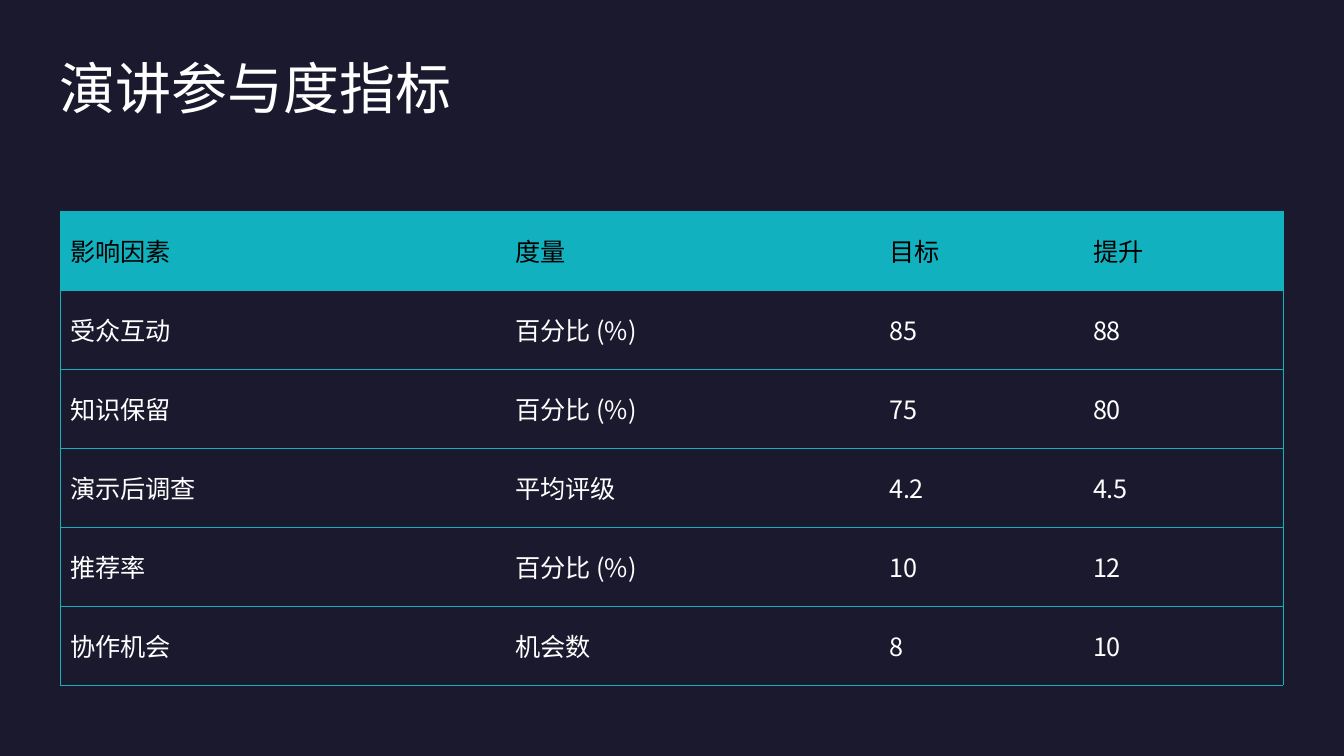
from pptx import Presentation
from pptx.dml.color import RGBColor
from pptx.enum.text import MSO_ANCHOR
from pptx.oxml.ns import qn
from pptx.util import Emu, Pt
from lxml.etree import SubElement

NAVY = RGBColor(0x1B, 0x19, 0x2E)
TEAL = RGBColor(0x12, 0xB1, 0xBF)
WHITE = RGBColor(0xFF, 0xFF, 0xFF)
BLACK = RGBColor(0x00, 0x00, 0x00)
FONT = "Noto Sans CJK SC"

LEFT, WIDTH = 60, 1223
TABLE_TOP, ROW_HEIGHT = 211, 79
COLUMN_WIDTHS = [445, 374, 204, 200]
METRICS = [
    ["影响因素", "度量", "目标", "提升"],
    ["受众互动", "百分比 (%)", "85", "88"],
    ["知识保留", "百分比 (%)", "75", "80"],
    ["演示后调查", "平均评级", "4.2", "4.5"],
    ["推荐率", "百分比 (%)", "10", "12"],
    ["协作机会", "机会数", "8", "10"],
]


def px(length):
    return Emu(round(length * 914400 / 100.8))


def write(frame, text, size, color):
    frame.text = text
    run = frame.paragraphs[0].runs[0]
    run.font.size = Pt(size)
    run.font.name = FONT
    run.font.color.rgb = color
    SubElement(run.font._element, qn("a:ea"), typeface=FONT)


# Slide and background
deck = Presentation()
deck.slide_width, deck.slide_height = px(1344), px(756)
slide = deck.slides.add_slide(deck.slide_layouts[6])
slide.background.fill.solid()
slide.background.fill.fore_color.rgb = NAVY

# Title
title = slide.shapes.add_textbox(px(LEFT), px(61), px(WIDTH), px(131)).text_frame
title.word_wrap = True
title.margin_left = title.margin_right = title.margin_top = title.margin_bottom = 0
write(title, "演讲参与度指标", 40, WHITE)
title.paragraphs[0].line_spacing = 0.9

# Metrics table
metrics = slide.shapes.add_table(
    len(METRICS), len(COLUMN_WIDTHS), px(LEFT), px(TABLE_TOP),
    px(WIDTH), px(ROW_HEIGHT * len(METRICS))).table
metrics.horz_banding = False
for column, width in zip(metrics.columns, COLUMN_WIDTHS):
    column.width = px(width)

last_column = len(COLUMN_WIDTHS) - 1
for r, values in enumerate(METRICS):
    metrics.rows[r].height = px(ROW_HEIGHT)
    for c, value in enumerate(values):
        cell = metrics.cell(r, c)
        cell.vertical_anchor = MSO_ANCHOR.MIDDLE
        write(cell.text_frame, value, 18, BLACK if r == 0 else WHITE)

        # Rules between rows and around the table, none between columns
        properties = cell._tc.get_or_add_tcPr()
        edges = {"lnL": c == 0, "lnR": c == last_column, "lnT": True, "lnB": True}
        for edge, visible in edges.items():
            line = SubElement(properties, qn(f"a:{edge}"), w=str(Pt(0.5)))
            if visible:
                paint = SubElement(line, qn("a:solidFill"))
                SubElement(paint, qn("a:srgbClr"), val=str(TEAL))
            else:
                SubElement(line, qn("a:noFill"))

        # Teal header, see-through body
        if r == 0:
            cell.fill.solid()
            cell.fill.fore_color.rgb = TEAL
        else:
            cell.fill.background()

deck.save("out.pptx")
